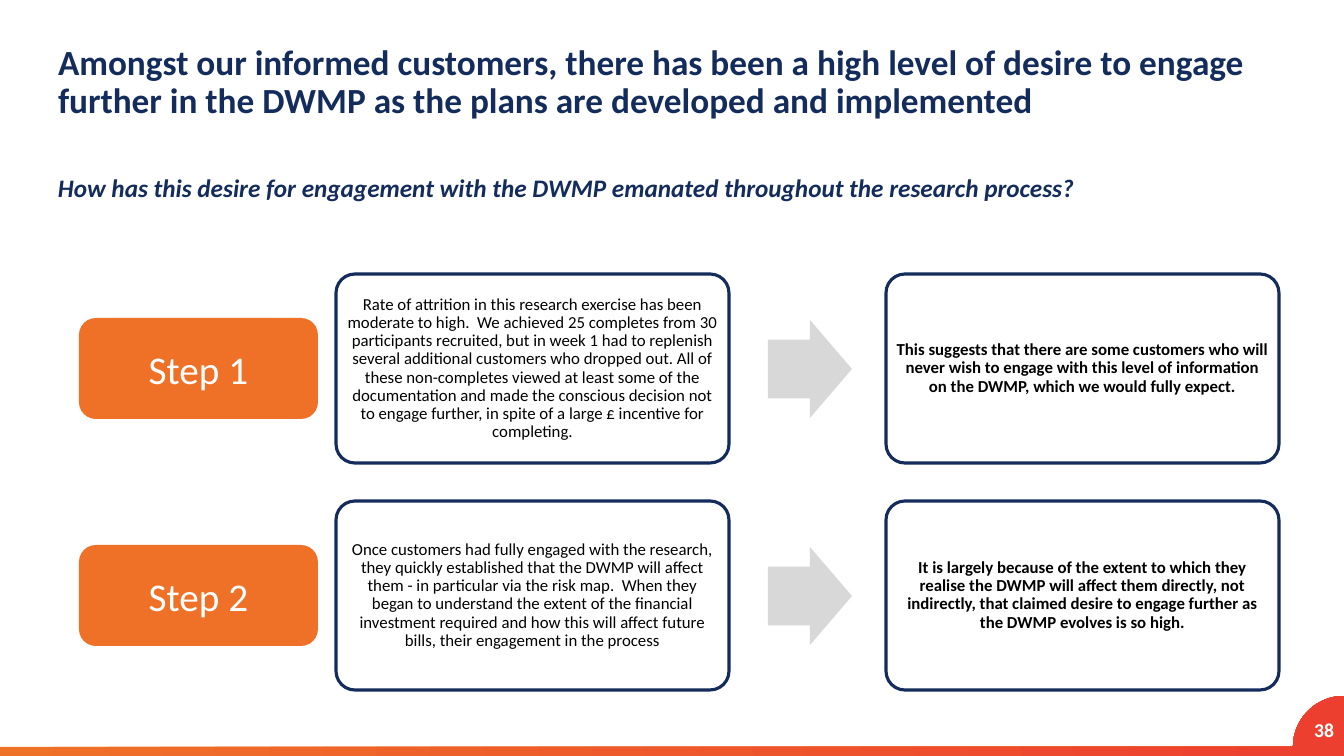
from math import cos, radians, sin

from pptx import Presentation
from pptx.dml.color import RGBColor
from pptx.enum.shapes import MSO_SHAPE
from pptx.enum.text import MSO_ANCHOR, PP_ALIGN
from pptx.util import Pt

PX = 914400 / 100.8
WIDE, HIGH = 1344, 756
PITCH = 227

COLORS = {
    "navy": "142C5B",
    "orange": "EF7128",
    "red": "ED3F2F",
    "grey": "D8D8D8",
    "white": "FFFFFF",
    "black": "000000",
}

STEPS = [
    (
        "Step 1",
        "Rate of attrition in this research exercise has been moderate to high.  "
        "We achieved 25 completes from 30 participants recruited, but in week 1 had "
        "to replenish several additional customers who dropped out. All of these "
        "non-completes viewed at least some of the documentation and made the "
        "conscious decision not to engage further, in spite of a large £ incentive "
        "for completing.",
        "This suggests that there are some customers who will never wish to engage "
        "with this level of information on the DWMP, which we would fully expect.",
    ),
    (
        "Step 2",
        "Once customers had fully engaged with the research, they quickly "
        "established that the DWMP will affect them - in particular via the risk "
        "map.  When they began to understand the extent of the financial investment "
        "required and how this will affect future bills, their engagement in the "
        "process",
        "It is largely because of the extent to which they realise the DWMP will "
        "affect them directly, not indirectly, that claimed desire to engage "
        "further as the DWMP evolves is so high.",
    ),
]


def draw(kind, box, fill=None, line=None):
    """Add a flat preset shape; box is left, top, width, height in px."""
    shape = slide.shapes.add_shape(kind, *(round(n * PX) for n in box))
    shape.shadow.inherit = False
    if fill:
        shape.fill.solid()
        shape.fill.fore_color.rgb = RGBColor.from_string(COLORS[fill])
    else:
        shape.fill.background()
    if line:
        shape.line.color.rgb = RGBColor.from_string(COLORS[line])
        shape.line.width = Pt(2.25)
    else:
        shape.line.fill.background()
    return shape


def write(shape, text, size, color, align=PP_ALIGN.CENTER, bold=False,
          italic=False, inset=(10, 5), anchor=MSO_ANCHOR.MIDDLE, space=1.0):
    """Fill a shape with one run; inset is the side and top margin in px."""
    frame = shape.text_frame
    frame.word_wrap = True
    frame.vertical_anchor = anchor
    frame.margin_left = frame.margin_right = round(inset[0] * PX)
    frame.margin_top = frame.margin_bottom = round(inset[1] * PX)
    para = frame.paragraphs[0]
    para.alignment = align
    para.line_spacing = space
    run = para.add_run()
    run.text = text
    font = run.font
    font.name = "Calibri"
    font.size = Pt(size)
    font.bold = bold
    font.italic = italic
    font.color.rgb = RGBColor.from_string(COLORS[color])


deck = Presentation()
deck.slide_width = round(WIDE * PX)
deck.slide_height = round(HIGH * PX)
slide = deck.slides.add_slide(deck.slide_layouts[5])

# Footer band that ends in a quarter circle
edge, radius = 747, 51
arc = [
    (WIDE - radius * cos(radians(a)), edge - radius * sin(radians(a)))
    for a in range(0, 91, 3)
]
points = [(0, HIGH), (0, edge)] + arc
path = slide.shapes.build_freeform(round(WIDE * PX), round(HIGH * PX))
path.add_line_segments([(round(x * PX), round(y * PX)) for x, y in points])
band = path.convert_to_shape()
band.shadow.inherit = False
band.line.fill.background()
band.fill.gradient()
band.fill.gradient_angle = 0
for stop, name in zip(band.fill.gradient_stops, ("orange", "red")):
    stop.color.rgb = RGBColor.from_string(COLORS[name])

page = slide.shapes.add_textbox(*(round(n * PX) for n in (1249, 710, 95, 40)))
write(page, "38", 14, "white", PP_ALIGN.RIGHT, bold=True, inset=(10, 0))

# Headings
title = slide.shapes.title
title.left, title.top, title.width, title.height = (
    round(n * PX) for n in (48, 40, 1246, 60)
)
write(title, "Amongst our informed customers, there has been a high level of desire "
      "to engage further in the DWMP as the plans are developed and implemented",
      25.2, "navy", PP_ALIGN.LEFT, bold=True, anchor=MSO_ANCHOR.TOP, space=0.9)

query = draw(MSO_SHAPE.RECTANGLE, (48, 157, 1200, 60), "white")
write(query, "How has this desire for engagement with the DWMP emanated throughout "
      "the research process?", 18, "navy", PP_ALIGN.LEFT, bold=True, italic=True)

# One row per step: label, finding, arrow, meaning
for row, (label, finding, meaning) in enumerate(STEPS):
    top = 274 + row * PITCH
    step = draw(MSO_SHAPE.ROUNDED_RECTANGLE, (79, top + 44, 239, 101), "orange")
    write(step, label, 28, "white")
    for left, text, bold in ((336, finding, False), (886, meaning, True)):
        card = draw(MSO_SHAPE.ROUNDED_RECTANGLE, (left, top, 393, 189), line="navy")
        card.adjustments[0] = 0.1
        write(card, text, 12, "black", bold=bold, inset=(5, 5), space=0.9)
    arrow = draw(MSO_SHAPE.RIGHT_ARROW, (768, top + 46, 84, 98), "grey")
    arrow.adjustments[0] = 0.6
    arrow.adjustments[1] = 0.5

deck.save("out.pptx")
